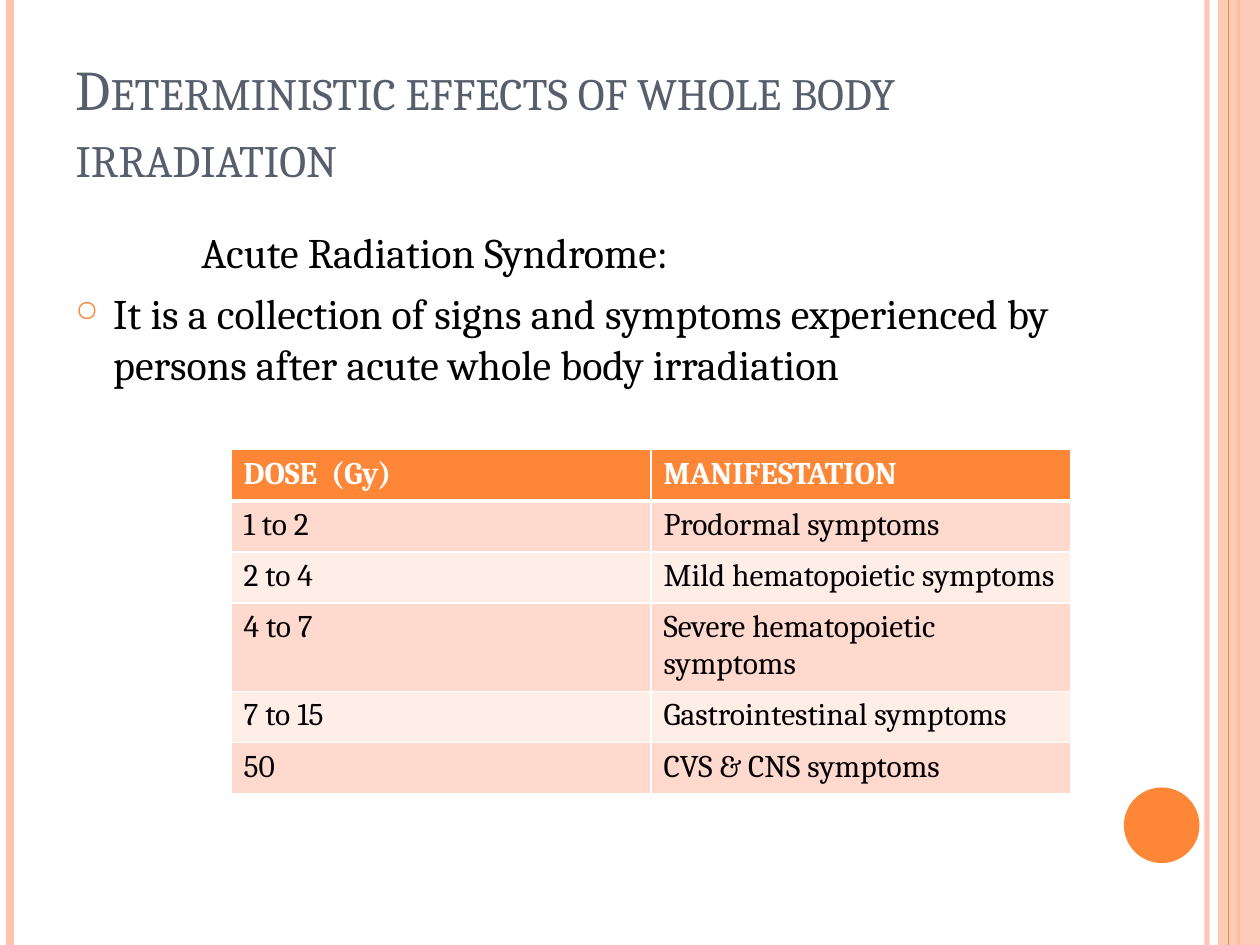
from dataclasses import dataclass

from lxml.etree import SubElement
from pptx import Presentation
from pptx.dml.color import RGBColor
from pptx.enum.shapes import MSO_CONNECTOR, MSO_SHAPE
from pptx.enum.text import MSO_ANCHOR, MSO_AUTO_SIZE, PP_ALIGN
from pptx.oxml.ns import qn
from pptx.util import Pt

FONT = "Cambria"
WIDE, HIGH = 720, 540
WHITE = RGBColor(0xFF, 0xFF, 0xFF)
BLACK = RGBColor(0, 0, 0)
SLATE = RGBColor(0x57, 0x5F, 0x6D)
ORANGE = RGBColor(0xFE, 0x86, 0x37)
PEACH = RGBColor(0xFE, 0xC3, 0xAE)
BANDS = RGBColor(0xFF, 0xD9, 0xCE), RGBColor(0xFF, 0xED, 0xE8)


@dataclass
class Rule:
    left: float
    width: float
    color: RGBColor
    alpha: int = 100


@dataclass
class Point:
    text: str
    margin: float
    indent: float = 0
    bullet: str = ""


RULES = [
    Rule(689.76, 3, PEACH, 93),
    Rule(5.76, 4.5, PEACH),
    Rule(707.76, 1.5, ORANGE),
    Rule(702, 0.75, ORANGE),
]
POINTS = [
    Point("Acute Radiation Syndrome:", 72),
    Point("It is a collection of signs and symptoms experienced by persons "
          "after acute whole body irradiation", 21.6, -21.6, "○"),
]
ROWS = [
    ("DOSE  (Gy)", "MANIFESTATION"),
    ("1 to 2", "Prodormal symptoms"),
    ("2 to 4", "Mild hematopoietic symptoms"),
    ("4 to 7", "Severe hematopoietic symptoms"),
    ("7 to 15", "Gastrointestinal symptoms"),
    ("50", "CVS & CNS symptoms"),
]


def add_run(para, text: str, size: float, color: RGBColor, bold: bool = False):
    run = para.add_run()
    run.text = text
    font = run.font
    font.name, font.size, font.bold = FONT, Pt(size), bold
    font.color.rgb = color
    return run


def set_alpha(props, alpha: int) -> None:
    if alpha < 100:
        color = next(props.iter(qn("a:srgbClr")))
        SubElement(color, qn("a:alpha"), val=str(alpha * 1000))


def add_rule(slide, rule: Rule) -> None:
    line = slide.shapes.add_connector(
        MSO_CONNECTOR.STRAIGHT, Pt(rule.left), Pt(0), Pt(rule.left), Pt(HIGH))
    line.line.width = Pt(rule.width)
    line.line.color.rgb = rule.color
    props = line._element.spPr
    set_alpha(props, rule.alpha)
    SubElement(props, qn("a:effectLst"))


def add_solid(slide, kind: MSO_SHAPE, box: tuple, color: RGBColor,
              alpha: int = 100) -> None:
    shape = slide.shapes.add_shape(kind, *map(Pt, box))
    shape.shadow.inherit = False
    shape.fill.solid()
    shape.fill.fore_color.rgb = color
    shape.line.fill.background()
    set_alpha(shape._element.spPr, alpha)


def set_title(slide, text: str) -> None:
    title = slide.shapes.title
    title.left, title.top, title.width, title.height = map(
        Pt, (36, 21.6, 588, 90))
    frame = title.text_frame
    frame.auto_size = MSO_AUTO_SIZE.NONE
    frame.vertical_anchor = MSO_ANCHOR.BOTTOM
    para = frame.paragraphs[0]
    para.alignment = PP_ALIGN.LEFT
    run = add_run(para, text, 32, SLATE)
    run.font._element.set("cap", "small")


def add_body(slide, points: list[Point]) -> None:
    frame = slide.shapes.add_textbox(
        Pt(36), Pt(126), Pt(588), Pt(384)).text_frame
    frame.word_wrap = True
    for i, point in enumerate(points):
        para = frame.add_paragraph() if i else frame.paragraphs[0]
        para.space_before = Pt(6)
        props = para._p.get_or_add_pPr()
        props.set("marL", str(Pt(point.margin)))
        props.set("indent", str(Pt(point.indent)))
        if point.bullet:
            color = SubElement(props, qn("a:buClr"))
            SubElement(color, qn("a:srgbClr"), val=str(ORANGE))
            SubElement(props, qn("a:buSzPct"), val="70000")
            SubElement(props, qn("a:buChar"), char=point.bullet)
        add_run(para, point.text, 24, BLACK)


def set_edge(cell, side: str, width: float) -> None:
    props = cell._tc.get_or_add_tcPr()
    edge = SubElement(props, qn(f"a:ln{side}"), w=str(Pt(width)))
    fill = SubElement(edge, qn("a:solidFill"))
    SubElement(fill, qn("a:srgbClr"), val=str(WHITE))


def add_grid(slide, rows: list[tuple]) -> None:
    step = 29.2
    grid = slide.shapes.add_table(
        len(rows), 2, Pt(132), Pt(257), Pt(480), Pt(step * len(rows))).table
    grid.horz_banding = False
    for i, row in enumerate(rows):
        head = i == 0
        grid.rows[i].height = Pt(step)
        for j, text in enumerate(row):
            cell = grid.cell(i, j)
            for side in "LRTB":
                thick = (head and side == "B") or (i == 1 and side == "T")
                set_edge(cell, side, 3 if thick else 1)
            cell.fill.solid()
            cell.fill.fore_color.rgb = ORANGE if head else BANDS[(i - 1) % 2]
            add_run(cell.text_frame.paragraphs[0], text, 18,
                    WHITE if head else BLACK, head)


def main() -> None:
    deck = Presentation()
    deck.slide_width, deck.slide_height = Pt(WIDE), Pt(HIGH)
    slide = deck.slides.add_slide(deck.slide_layouts[5])
    for rule in RULES[:3]:
        add_rule(slide, rule)
    add_solid(slide, MSO_SHAPE.RECTANGLE, (696, 0, 24, HIGH), PEACH, 87)
    add_rule(slide, RULES[3])
    add_solid(slide, MSO_SHAPE.OVAL, (642.24, 450, 43.2, 43.2), ORANGE)
    set_title(slide, "Deterministic effects of whole body irradiation")
    add_body(slide, POINTS)
    add_grid(slide, ROWS)
    deck.save("out.pptx")


if __name__ == "__main__":
    main()
